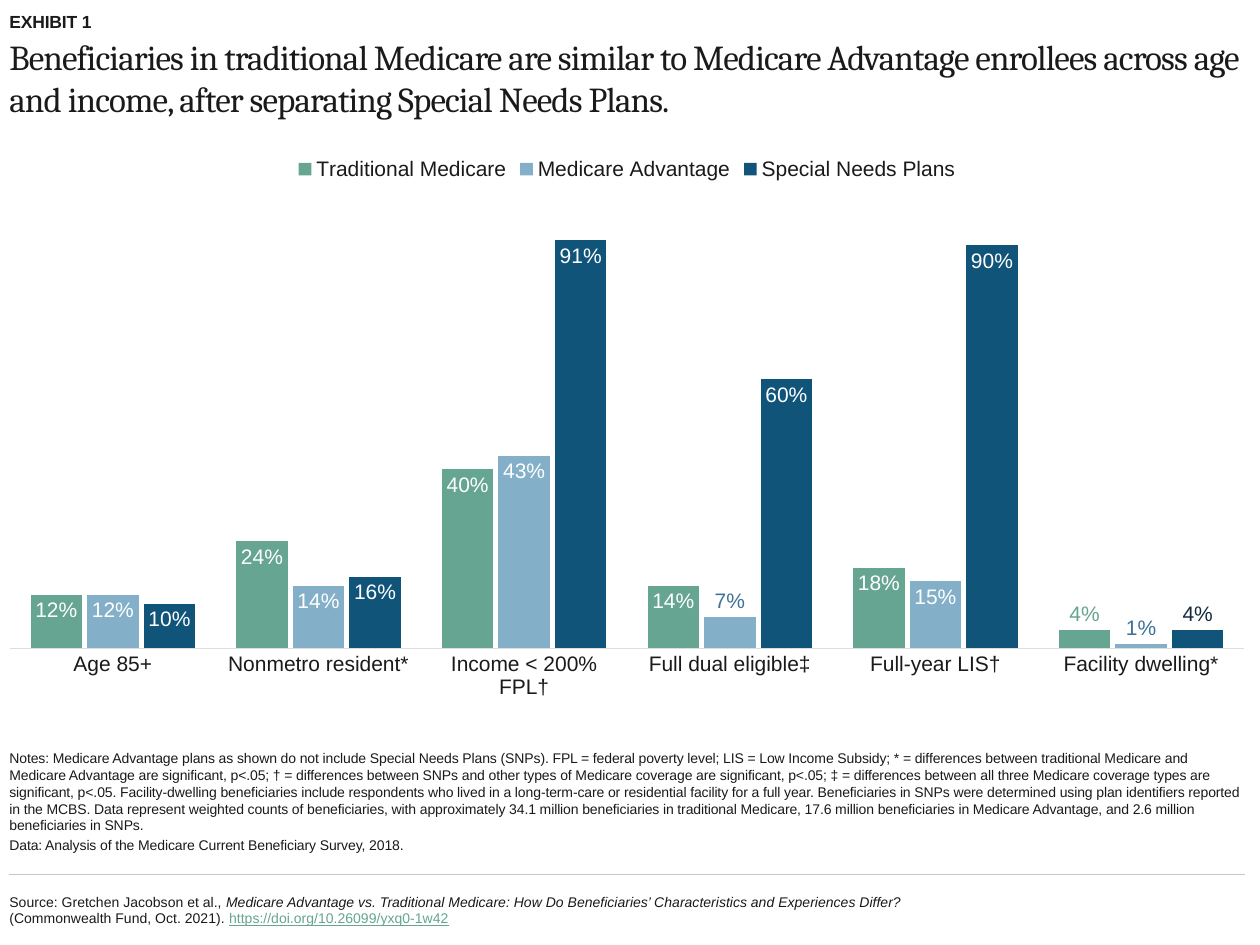
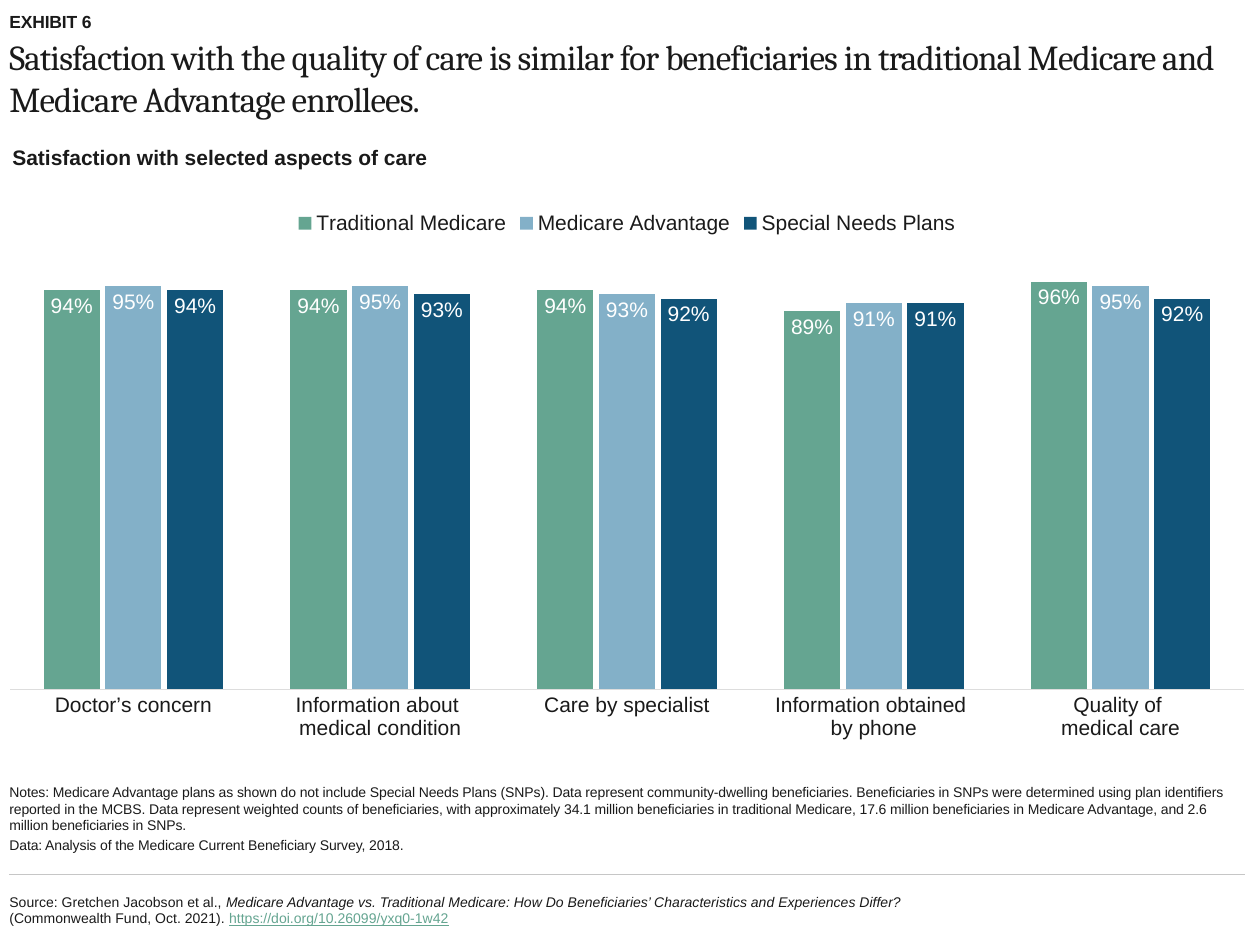
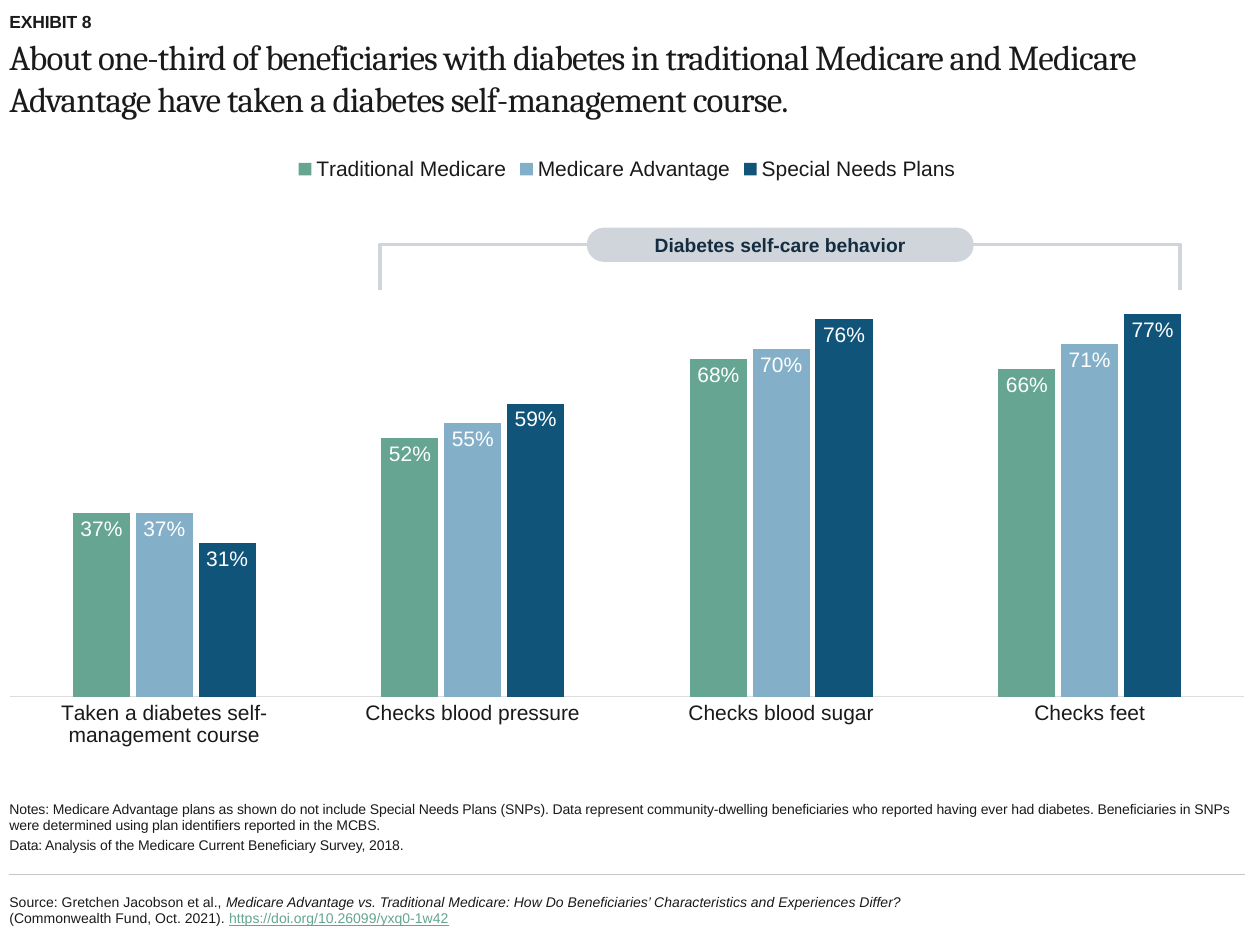
from lxml import etree
from pptx import Presentation
from pptx import util as u
from pptx.chart import data as chart_data
from pptx.dml.color import RGBColor
from pptx.enum import chart as ch, shapes, text
from pptx.oxml import ns

# Colours and fonts
INK = RGBColor(0x1A, 0x1A, 0x1A)
NAVY = RGBColor(0x13, 0x2C, 0x40)
GREEN = RGBColor(0x65, 0xA5, 0x91)
SKY = RGBColor(0x83, 0xB0, 0xC8)
BLUE = RGBColor(0x11, 0x54, 0x79)
MID_BLUE = RGBColor(0x3F, 0x73, 0x96)
RULE = RGBColor(0xC6, 0xC6, 0xC6)
AXIS = RGBColor(0xDD, 0xDD, 0xDD)
SILVER = RGBColor(0xCF, 0xD5, 0xDA)
WHITE = RGBColor(0xFF, 0xFF, 0xFF)
SANS, SERIF = "Arial", "Cambria"

# Shared page measures, in cm
LEFT, WIDTH = 0.19, 24.9
PLANS = [("Traditional Medicare", GREEN), ("Medicare Advantage", SKY),
         ("Special Needs Plans", BLUE)]
SURVEY = "Data: Analysis of the Medicare Current Beneficiary Survey, 2018."
NOTES_START = ("Notes: Medicare Advantage plans as shown do not include "
               "Special Needs Plans (SNPs). ")
IDENTIFIED = ("Beneficiaries in SNPs were determined using plan identifiers "
              "reported in the MCBS.")
WEIGHTED = (" Data represent weighted counts of beneficiaries, with approximately "
            "34.1 million beneficiaries in traditional Medicare, 17.6 million "
            "beneficiaries in Medicare Advantage, and 2.6 million beneficiaries in SNPs.")
SOURCE = [
    ("Source: Gretchen Jacobson et al., ", False, False),
    ("Medicare Advantage vs. Traditional Medicare: How Do Beneficiaries’ "
     "Characteristics and Experiences Differ?", True, False),
    (" (Commonwealth Fund, Oct. 2021). ", False, False),
    ("https://doi.org/10.26099/yxq0-1w42", False, True),
]

# Content: chart is top, height; plot is top and height in percent of the chart;
# outside maps (plan, category) to the colour of a label above its bar
EXHIBITS = [
    dict(
        number="EXHIBIT 1",
        title="Beneficiaries in traditional Medicare are similar to Medicare Advantage "
              "enrollees across age and income, after separating Special Needs Plans.",
        chart=(2.9, 11.68), plot=(9.7, 77.4), gap=80,
        categories=["Age 85+", "Nonmetro resident*", "Income < 200% FPL†",
                    "Full dual eligible‡", "Full-year LIS†", "Facility dwelling*"],
        values=[(0.12, 0.24, 0.40, 0.14, 0.18, 0.04),
                (0.12, 0.14, 0.43, 0.07, 0.15, 0.01),
                (0.10, 0.16, 0.91, 0.60, 0.90, 0.04)],
        outside={(0, 5): GREEN, (1, 3): MID_BLUE, (1, 5): MID_BLUE, (2, 5): NAVY},
        notes=NOTES_START +
              "FPL = federal poverty level; LIS = Low Income Subsidy; * = differences "
              "between traditional Medicare and Medicare Advantage are significant, p<.05; "
              "† = differences between SNPs and other types of Medicare coverage are "
              "significant, p<.05; ‡ = differences between all three Medicare coverage "
              "types are significant, p<.05. Facility-dwelling beneficiaries include "
              "respondents who lived in a long-term-care or residential facility for a "
              "full year. " + IDENTIFIED + WEIGHTED,
    ),
    dict(
        number="EXHIBIT 6",
        title="Satisfaction with the quality of care is similar for beneficiaries in "
              "traditional Medicare and Medicare Advantage enrollees.",
        chart=(3.99, 11.2), plot=(12, 76.5), gap=120,
        categories=["Doctor’s concern", "Information about \nmedical condition",
                    "Care by specialist", "Information obtained \nby phone",
                    "Quality of \nmedical care"],
        values=[(0.94, 0.94, 0.94, 0.89, 0.96),
                (0.95, 0.95, 0.93, 0.91, 0.95),
                (0.94, 0.93, 0.92, 0.91, 0.92)],
        outside={},
        notes=NOTES_START + "Data represent community-dwelling beneficiaries. "
              + IDENTIFIED + WEIGHTED,
    ),
    dict(
        number="EXHIBIT 8",
        title="About one-third of beneficiaries with diabetes in traditional Medicare and "
              "Medicare Advantage have taken a diabetes self-management course.",
        chart=(2.9, 12.67), plot=(8.9, 79.1), gap=220,
        categories=["Taken a diabetes self-management course", "Checks blood pressure",
                    "Checks blood sugar", "Checks feet"],
        values=[(0.37, 0.52, 0.68, 0.66),
                (0.37, 0.55, 0.70, 0.71),
                (0.31, 0.59, 0.76, 0.77)],
        outside={},
        notes=NOTES_START + "Data represent community-dwelling beneficiaries who reported "
              "having ever had diabetes. " + IDENTIFIED,
    ),
]


def style(font, size, color=INK, name=SANS, bold=False):
    font.size, font.name, font.bold = u.Pt(size), name, bold
    font.color.rgb = color


def add_text(slide, box, lines, size, anchor, name=SANS, bold=False, tracking=0, inset=0):
    frame = slide.shapes.add_textbox(*map(u.Cm, box)).text_frame
    frame.word_wrap = True
    frame.vertical_anchor = anchor
    frame.margin_left = frame.margin_right = u.Cm(inset)
    frame.margin_top = frame.margin_bottom = u.Cm(inset / 2)
    frame.text = "\n".join(lines)
    for index, paragraph in enumerate(frame.paragraphs):
        if index:
            paragraph.space_before = u.Pt(size * 0.2)
        for run in paragraph.runs:
            style(run.font, size, name=name, bold=bold)
            if tracking:
                run.font._element.set("spc", str(tracking))
    return frame


deck = Presentation()
deck.slide_width, deck.slide_height = u.Cm(25.4), u.Cm(19.05)
TOP, MIDDLE, BOTTOM = (text.MSO_ANCHOR.TOP, text.MSO_ANCHOR.MIDDLE,
                       text.MSO_ANCHOR.BOTTOM)
slides = []

for exhibit in EXHIBITS:
    slide = deck.slides.add_slide(deck.slide_layouts[6])
    slides.append(slide)

    # Footer: rule and source
    rule = slide.shapes.add_connector(
        shapes.MSO_CONNECTOR.STRAIGHT, u.Cm(LEFT + WIDTH), u.Cm(17.63),
        u.Cm(LEFT), u.Cm(17.63))
    rule.line.color.rgb, rule.line.width = RULE, u.Pt(0.75)
    etree.SubElement(rule._element.spPr, ns.qn("a:effectLst"))
    source = add_text(slide, (LEFT, 17.76, 19.81, 1.17), [], 8, MIDDLE).paragraphs[0]
    for words, italic, linked in SOURCE:
        run = source.add_run()
        run.text = words
        style(run.font, 8, GREEN if linked else INK)
        run.font.italic, run.font.underline = italic, linked

    # Heading and notes
    add_text(slide, (LEFT, 0.11, WIDTH, 0.53), [exhibit["number"]], 10, BOTTOM,
             bold=True, tracking=-8)
    add_text(slide, (LEFT, 0.72, WIDTH, 2.11), [exhibit["title"]], 20, TOP,
             name=SERIF, tracking=-50)
    add_text(slide, (LEFT, 15.93, WIDTH, 1.27), [exhibit["notes"], SURVEY], 8, BOTTOM,
             tracking=-8)

    # Chart of the three plan types
    shares = chart_data.CategoryChartData(number_format="0%")
    shares.categories = exhibit["categories"]
    for (plan, _), values in zip(PLANS, exhibit["values"]):
        shares.add_series(plan, values)
    top, height = exhibit["chart"]
    chart = slide.shapes.add_chart(
        ch.XL_CHART_TYPE.COLUMN_CLUSTERED, u.Cm(LEFT), u.Cm(top), u.Cm(WIDTH),
        u.Cm(height), shares).chart
    style(chart.font, 12)
    chart.has_title = False
    chart.has_legend = True
    chart.legend.position = ch.XL_LEGEND_POSITION.TOP
    chart.legend.include_in_layout = False
    style(chart.legend.font, 12)

    chart.value_axis.visible = False
    chart.value_axis.has_major_gridlines = False
    chart.value_axis.minimum_scale, chart.value_axis.maximum_scale = 0, 1
    chart.value_axis.major_unit = 0.2
    aspects = chart.category_axis
    aspects.major_tick_mark = ch.XL_TICK_MARK.NONE
    aspects.format.line.color.rgb, aspects.format.line.width = AXIS, u.Pt(0.75)
    style(aspects.tick_labels.font, 12)

    bars = chart.plots[0]
    bars.gap_width, bars.overlap, bars.vary_by_categories = exhibit["gap"], -10, False
    for series, (_, color) in zip(bars.series, PLANS):
        series.format.fill.solid()
        series.format.fill.fore_color.rgb = color
        labels = series.data_labels
        labels.show_value = True
        labels.number_format, labels.number_format_is_linked = "0%", False
        labels.position = ch.XL_LABEL_POSITION.INSIDE_END
        style(labels.font, 12, WHITE)
    for (plan, category), color in exhibit["outside"].items():
        label = bars.series[plan].points[category].data_label
        style(label.font, 12, color)
        label.position = ch.XL_LABEL_POSITION.OUTSIDE_END

    # Fixed plot area across the full chart width
    plot_area = chart._chartSpace.chart.plotArea
    for old in plot_area.findall(ns.qn("c:layout")):
        plot_area.remove(old)
    layout = etree.Element(ns.qn("c:layout"))
    plot_area.insert(0, layout)
    manual = etree.SubElement(layout, ns.qn("c:manualLayout"))
    plot_top, plot_height = exhibit["plot"]
    for tag, value in [("layoutTarget", "inner"), ("xMode", "edge"), ("yMode", "edge"),
                       ("x", 0), ("y", plot_top / 100), ("w", 1),
                       ("h", plot_height / 100)]:
        etree.SubElement(manual, ns.qn(f"c:{tag}")).set("val", str(value))

# Exhibit 6: chart heading
add_text(slides[1], (0, 2.79, 17.3, 0.76), ["Satisfaction with selected aspects of care"],
         12, TOP, bold=True, inset=0.25)

# Exhibit 8: bracket over the self-care columns, a left bracket turned to open downwards
span_left, span, bracket_top, depth = 7.66, 16.13, 4.93, 0.91
bracket = slides[2].shapes.add_shape(
    shapes.MSO_SHAPE.LEFT_BRACKET,
    u.Cm(span_left + (span - depth) / 2), u.Cm(bracket_top - (span - depth) / 2),
    u.Cm(depth), u.Cm(span))
bracket.rotation = 90
bracket.adjustments[0] = 0
bracket.shadow.inherit = False
bracket.fill.background()
bracket.line.color.rgb, bracket.line.width = SILVER, u.Pt(2.25)

behavior = slides[2].shapes.add_shape(
    shapes.MSO_SHAPE.ROUNDED_RECTANGLE, u.Cm(11.83), u.Cm(4.59), u.Cm(7.8), u.Cm(0.69))
behavior.adjustments[0] = 0.5
behavior.shadow.inherit = False
behavior.fill.solid()
behavior.fill.fore_color.rgb = SILVER
behavior.line.fill.background()
caption = behavior.text_frame
caption.margin_left = caption.margin_right = 0
caption.vertical_anchor = MIDDLE
caption.text = "Diabetes self-care behavior"
caption.paragraphs[0].alignment = text.PP_ALIGN.CENTER
style(caption.paragraphs[0].runs[0].font, 11, NAVY, bold=True)

deck.save("out.pptx")
